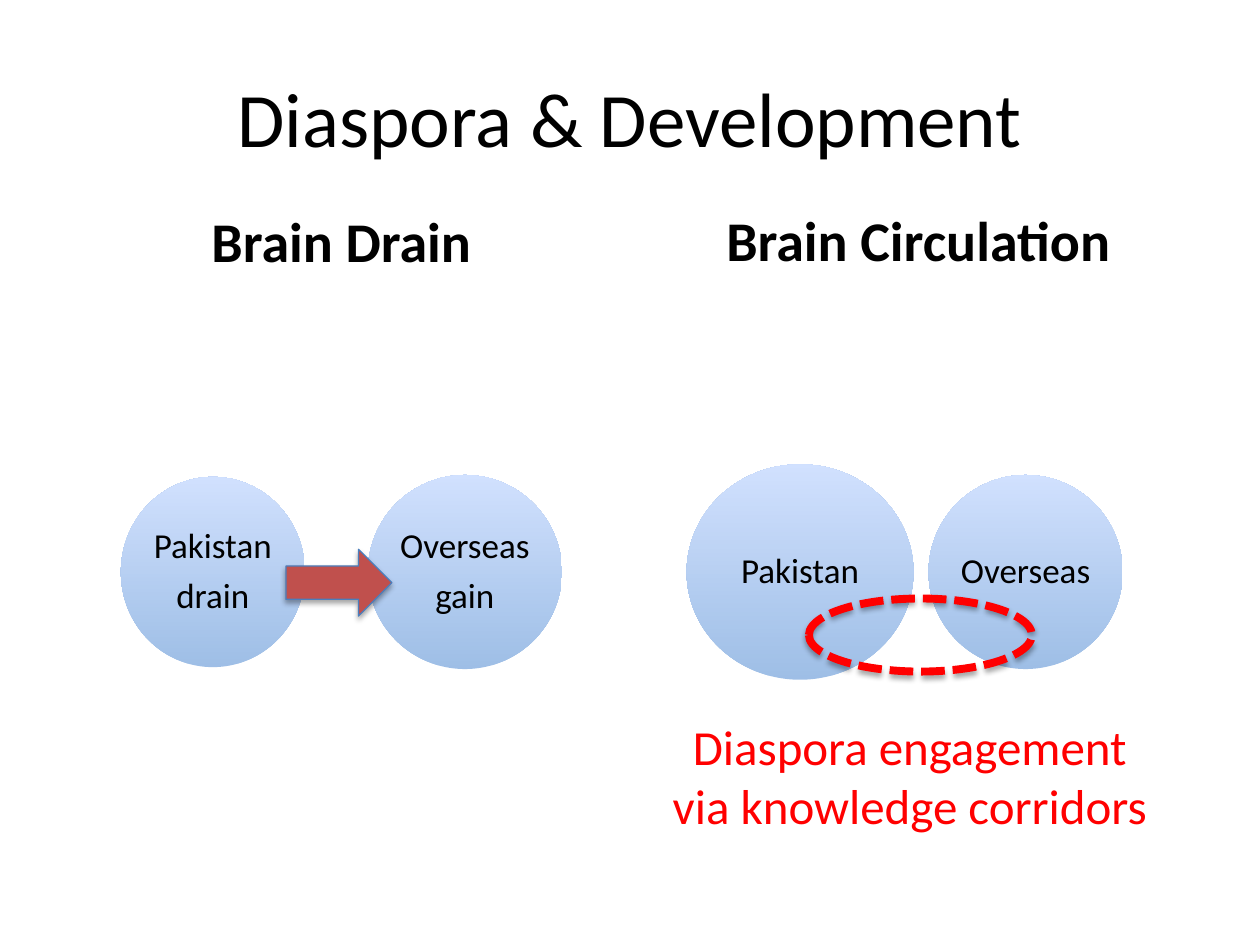
from lxml import etree
from pptx import Presentation
from pptx.dml.color import RGBColor
from pptx.enum.dml import MSO_LINE
from pptx.enum.shapes import MSO_SHAPE
from pptx.enum.text import MSO_ANCHOR, MSO_AUTO_SIZE, PP_ALIGN
from pptx.oxml.ns import qn
from pptx.util import Inches, Pt

OVAL, RIGHT_ARROW = MSO_SHAPE.OVAL, MSO_SHAPE.RIGHT_ARROW
TOP, MIDDLE = MSO_ANCHOR.TOP, MSO_ANCHOR.MIDDLE
CENTER = PP_ALIGN.CENTER
DASH = MSO_LINE.SQUARE_DOT
FIT_SHAPE = MSO_AUTO_SIZE.SHAPE_TO_FIT_TEXT

BLACK = RGBColor(0x00, 0x00, 0x00)
RED = RGBColor(0xFF, 0x00, 0x00)
BRICK = RGBColor(0xC0, 0x50, 0x4D)
ARROW_EDGE = RGBColor(0x4B, 0x7E, 0xBC)
DEEP_BLUE = RGBColor(0x3F, 0x7F, 0xCE)
PALE_BLUE = RGBColor(0xA4, 0xC4, 0xFF)
FONT = "Calibri"

TITLE = "Diaspora & Development"
TITLE_BOX = (0.5, 0.3, 9, 1.25)
HEADINGS = [
    (1, "Brain Drain", (0.5, 1.59, 4.42, 0.7)),
    (3, "Brain Circulation", (5.08, 1.58, 4.42, 0.7)),
]
CIRCLES_MIDDLE = 4.54
CIRCLES = [
    (["Pakistan", "drain"], 0.96, 1.46, 1.51),
    (["Overseas", "gain"], 2.92, 1.54, 1.54),
    (["Pakistan"], 5.45, 1.8, 1.71),
    (["Overseas"], 7.37, 1.54, 1.54),
]
CAPTION = ["Diaspora engagement", "via knowledge corridors"]
CAPTION_BOX = (5.21, 5.64, 4.02, 1.04)
ARROW_BOX = (2.27, 4.36, 0.84, 0.53)
OVERLAP_BOX = (6.42, 4.75, 1.77, 0.58)


def inches(box):
    return [Inches(length) for length in box]


def place(shape, box):
    shape.left, shape.top, shape.width, shape.height = inches(box)


def write(frame, lines, size, color=BLACK, bold=False, anchor=TOP):
    frame.vertical_anchor = anchor
    for index, line in enumerate(lines):
        paragraph = frame.paragraphs[0] if index == 0 else frame.add_paragraph()
        paragraph.alignment = CENTER
        run = paragraph.add_run()
        run.text = line
        run.font.name = FONT
        run.font.size = Pt(size)
        run.font.bold = bold
        run.font.color.rgb = color


def add_shape(slide, kind, box):
    shape = slide.shapes.add_shape(kind, *inches(box))
    shape.shadow.inherit = False
    return shape


def add_circle(slide, lines, left, width, height):
    top = CIRCLES_MIDDLE - height / 2
    circle = add_shape(slide, OVAL, (left, top, width, height))
    circle.line.fill.background()
    circle.fill.gradient()
    circle.fill.gradient_angle = 90
    for stop, color in zip(circle.fill.gradient_stops, (DEEP_BLUE, PALE_BLUE)):
        stop.color.rgb = color
    for color in circle.element.spPr.iter(qn("a:srgbClr")):
        etree.SubElement(color, qn("a:alpha"), val="50000")
    frame = circle.text_frame
    frame.word_wrap = False
    frame.margin_left = frame.margin_right = Inches(0.03)
    frame.margin_top = frame.margin_bottom = Inches(0.03)
    write(frame, lines, 20, anchor=MIDDLE)
    for paragraph in frame.paragraphs:
        paragraph.line_spacing = 0.9
        paragraph.space_after = Pt(7)


def add_shadow(shape):
    effects = shape.element.spPr.find(qn("a:effectLst"))
    shadow = etree.SubElement(
        effects, qn("a:outerShdw"), blurRad=str(Pt(3.1)), dist=str(Pt(1.8)),
        dir="5400000", rotWithShape="0")
    color = etree.SubElement(shadow, qn("a:srgbClr"), val=str(BLACK))
    etree.SubElement(color, qn("a:alpha"), val="35000")


def main():
    presentation = Presentation()
    presentation.slide_width, presentation.slide_height = Inches(10), Inches(7.5)
    comparison = presentation.slide_layouts.get_by_name("Comparison")
    slide = presentation.slides.add_slide(comparison)

    place(slide.shapes.title, TITLE_BOX)
    write(slide.shapes.title.text_frame, [TITLE], 44, anchor=MIDDLE)
    for index, heading, box in HEADINGS:
        body = slide.placeholders[index]
        place(body, box)
        write(body.text_frame, [heading], 32, bold=True)
        body.text_frame.paragraphs[0].space_before = Pt(6.4)
    for placeholder in list(slide.placeholders):
        if not placeholder.text_frame.text:
            placeholder.element.getparent().remove(placeholder.element)

    for circle in CIRCLES:
        add_circle(slide, *circle)

    caption = slide.shapes.add_textbox(*inches(CAPTION_BOX))
    caption.text_frame.word_wrap = False
    caption.text_frame.auto_size = FIT_SHAPE
    write(caption.text_frame, CAPTION, 28, RED)

    arrow = add_shape(slide, RIGHT_ARROW, ARROW_BOX)
    arrow.fill.solid()
    arrow.fill.fore_color.rgb = BRICK
    arrow.line.color.rgb = ARROW_EDGE
    arrow.line.width = Pt(0.75)
    add_shadow(arrow)

    overlap = add_shape(slide, OVAL, OVERLAP_BOX)
    overlap.fill.background()
    overlap.line.color.rgb = RED
    overlap.line.width = Pt(4.5)
    overlap.line.dash_style = DASH
    add_shadow(overlap)

    presentation.save("out.pptx")


if __name__ == "__main__":
    main()
